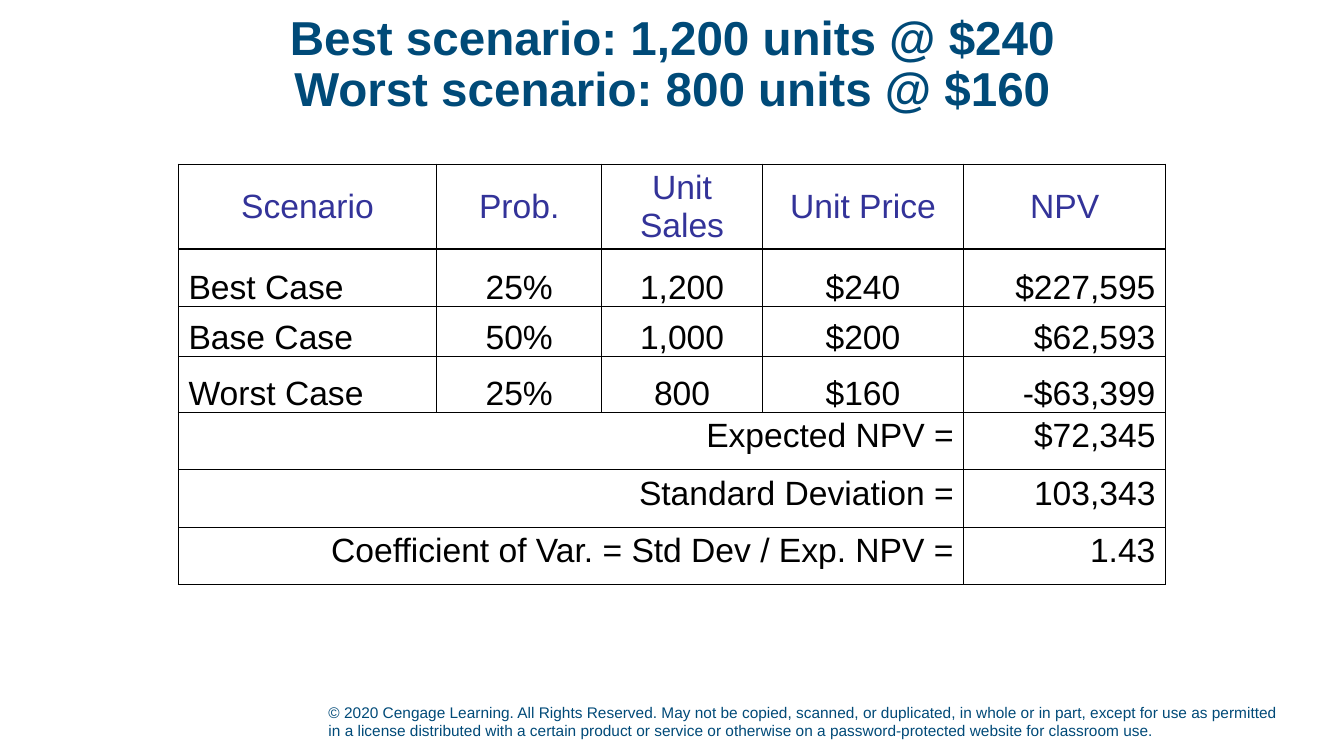
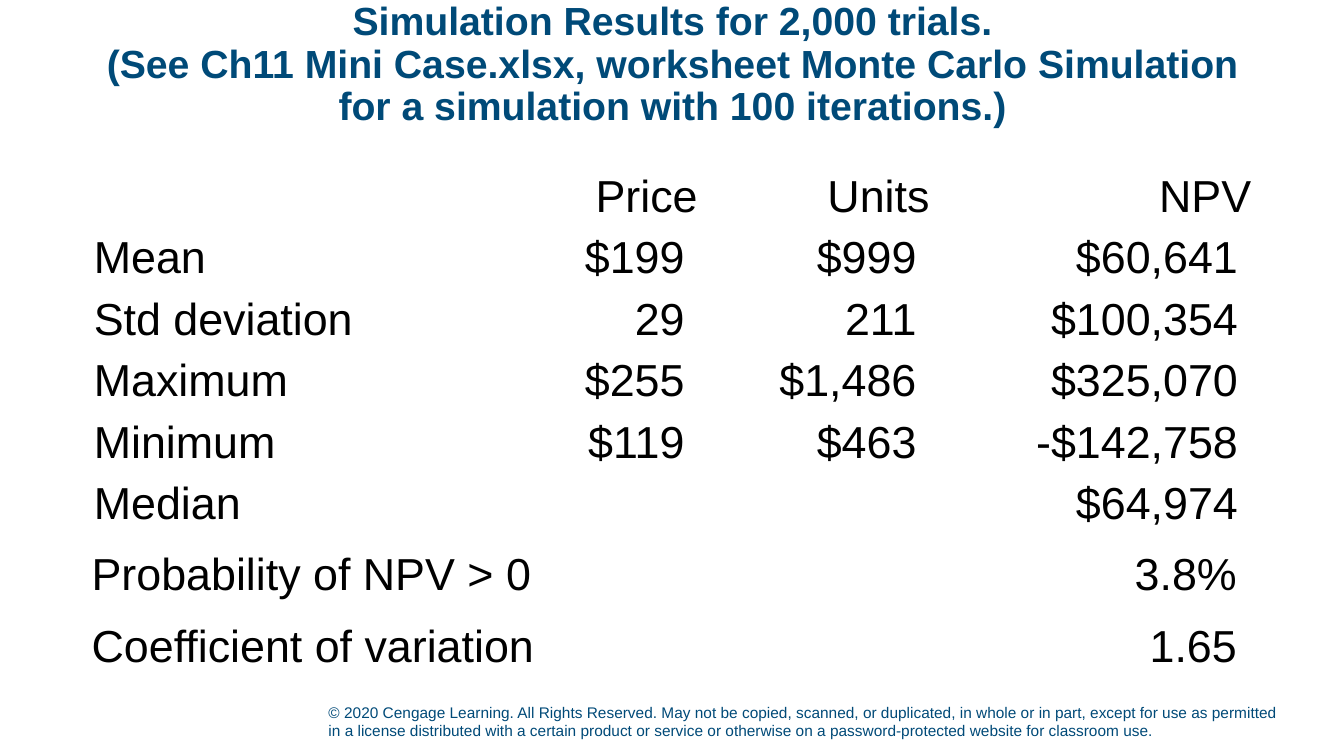
from lxml.etree import SubElement
from pptx import Presentation
from pptx.dml.color import RGBColor
from pptx.enum.text import MSO_ANCHOR, PP_ALIGN
from pptx.oxml import parse_xml
from pptx.oxml.ns import nsdecls, qn
from pptx.util import Inches, Pt

# Shared style
FONT = "Arial"
NAVY, INDIGO, BLACK = "004A78", "333399", "000000"
LEFT, CENTER, RIGHT = PP_ALIGN.LEFT, PP_ALIGN.CENTER, PP_ALIGN.RIGHT
TOP, MIDDLE, BOTTOM = MSO_ANCHOR.TOP, MSO_ANCHOR.MIDDLE, MSO_ANCHOR.BOTTOM
FOOTER = (
    "© 2020 Cengage Learning. All Rights Reserved. May not be copied, scanned, "
    "or duplicated, in whole or in part, except for use as permitted in a license "
    "distributed with a certain product or service or otherwise on a "
    "password-protected website for classroom use."
)


def color(hex_code):
    return RGBColor.from_string(hex_code)


def style_text(frame, size, hex_code, align=LEFT, bold=False):
    for para in frame.paragraphs:
        para.alignment = align
        for span in para.runs:
            span.font.name = FONT
            span.font.size = Pt(size)
            span.font.bold = bold
            span.font.color.rgb = color(hex_code)


def add_text(page, area, text, size, hex_code, anchor=TOP, align=LEFT, bold=False):
    box = page.shapes.add_textbox(*(Inches(length) for length in area))
    frame = box.text_frame
    frame.word_wrap = True
    frame.vertical_anchor = anchor
    frame.text = text
    style_text(frame, size, hex_code, align, bold)
    return frame


def add_page(deck, title, title_size):
    """Add a blank page with the shared footer and title."""
    page = deck.slides.add_slide(deck.slide_layouts[6])
    add_text(page, (3.16, 6.89, 9.63, 0.5), FOOTER, 11, NAVY, BOTTOM)
    frame = add_text(page, (0.92, 0.15, 11.5, 1), title, title_size, NAVY,
                     MIDDLE, CENTER, bold=True)
    frame.paragraphs[0].line_spacing = 0.9
    return page


def add_borders(cell):
    properties = cell._tc.get_or_add_tcPr()
    for index, side in enumerate("LRTB"):
        line = parse_xml(
            f'<a:ln{side} {nsdecls("a")} w="12700"><a:solidFill>'
            f'<a:srgbClr val="{BLACK}"/></a:solidFill></a:ln{side}>')
        properties.insert(index, line)


def add_grid(page, left, top, widths, heights, rows, size, cell_style, bordered=False):
    """cell_style(row, column) gives color, alignment, anchor and insets."""
    table = page.shapes.add_table(
        len(rows), len(widths), Inches(left), Inches(top),
        Inches(sum(widths)), Inches(sum(heights))).table
    table.first_row = table.horz_banding = False
    for column, width in zip(table.columns, widths):
        column.width = Inches(width)
    for r, (texts, height) in enumerate(zip(rows, heights)):
        table.rows[r].height = Inches(height)
        for c, text in enumerate(texts):
            cell = table.cell(r, c)
            hex_code, align, anchor, insets = cell_style(r, c)
            cell.fill.background()
            cell.vertical_anchor = anchor
            (cell.margin_left, cell.margin_top, cell.margin_right,
             cell.margin_bottom) = (Inches(inset) for inset in insets)
            cell.text = text
            style_text(cell.text_frame, size, hex_code, align)
            if bordered:
                add_borders(cell)


def add_tabbed_lines(page, area, lines, size, tab):
    """Label and value on each line, the value on a right tab stop."""
    text = "\n".join("\t".join(line) for line in lines)
    frame = add_text(page, area, text, size, BLACK)
    for index, para in enumerate(frame.paragraphs):
        para.space_before = Pt(13 if index else 0)
        stops = SubElement(para._p.get_or_add_pPr(), qn("a:tabLst"))
        SubElement(stops, qn("a:tab"), pos=str(Inches(tab)), algn="r")


# Cell styles
def scenario_style(row, column):
    insets = (0.1, 0, 0.1, 0)
    if row == 0:
        return INDIGO, CENTER, MIDDLE, insets
    align = {0: LEFT, 4: RIGHT}.get(column, CENTER)
    return BLACK, align, BOTTOM, insets


def summary_style(row, column):
    return BLACK, RIGHT, TOP, (0.1, 0.05, 0.1, 0.05)


def simulation_style(row, column):
    number = row > 0 and column > 0
    insets = (0, 0, 0.14, 0) if number else (0.01, 0.01, 0.01, 0)
    return BLACK, RIGHT if column else LEFT, BOTTOM, insets


def build_scenarios(deck):
    page = add_page(
        deck, "Best scenario: 1,200 units @ $240\vWorst scenario: 800 units @ $160", 34)
    left, top = 1.77, 1.63
    widths = [2.56, 1.64, 1.59, 2, 2]
    heights = [0.84, 0.57, 0.5, 0.55]
    cases = [
        ("Scenario", "Prob.", "Unit Sales", "Unit Price", "NPV"),
        ("Best Case", "25%", "1,200", "$240", "$227,595"),
        ("Base Case", "50%", "1,000", "$200", "$62,593"),
        ("Worst Case", "25%", "800", "$160", "-$63,399"),
    ]
    summary = [
        ("Expected NPV =", "$72,345"),
        ("Standard Deviation =", "103,343"),
        ("Coefficient of Var. = Std Dev / Exp. NPV =", "1.43"),
    ]
    add_grid(page, left, top, widths, heights, cases, 24, scenario_style, bordered=True)
    add_grid(page, left, top + sum(heights), [sum(widths[:-1]), widths[-1]],
             [0.57] * len(summary), summary, 24, summary_style, bordered=True)


def build_simulation(deck):
    page = add_page(
        deck, "Simulation Results for 2,000 trials.\v(See Ch11 Mini Case.xlsx, "
        "worksheet Monte Carlo Simulation for a simulation with 100 iterations.)", 28)
    results = [
        ("", "Price", "Units", "NPV"),
        ("Mean", "$199", "$999", "$60,641"),
        ("Std deviation", "29", "211", "$100,354"),
        ("Maximum", "$255", "$1,486", "$325,070"),
        ("Minimum", "$119", "$463", "-$142,758"),
        ("Median", "", "", "$64,974"),
    ]
    add_grid(page, 0.92, 1.59, [3.83, 2.18, 2.3, 3.19], [0.61] * len(results),
             results, 32, simulation_style)
    measures = [("Probability of NPV > 0", "3.8%"), ("Coefficient of variation", "1.65")]
    add_tabbed_lines(page, (0.81, 5.36, 11.65, 1.45), measures, 32, 11.36)


def main():
    deck = Presentation()
    deck.slide_width, deck.slide_height = Inches(13.33), Inches(7.5)
    build_scenarios(deck)
    build_simulation(deck)
    deck.save("out.pptx")


if __name__ == "__main__":
    main()
